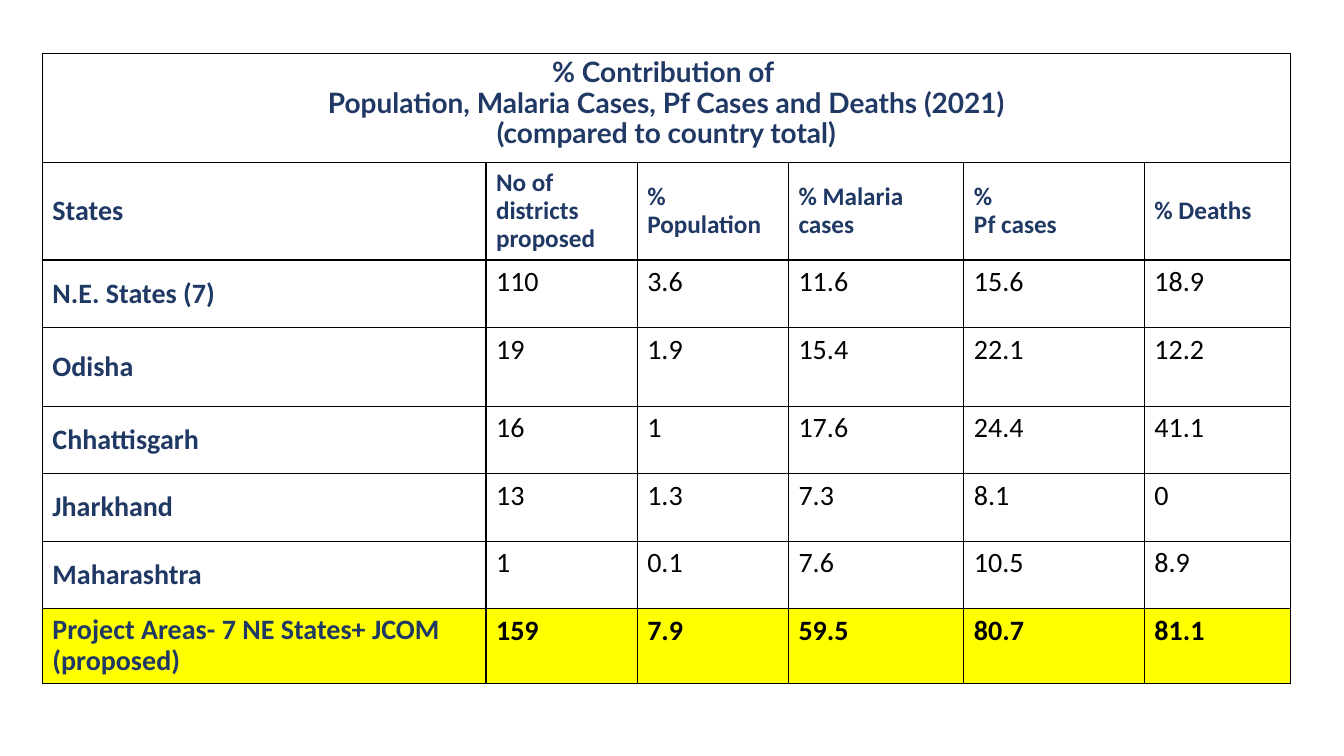
import pptx
import pptx.util
import pptx.dml.color
import pptx.enum.text
import pptx.oxml
import pptx.oxml.ns

Inches, Pt = pptx.util.Inches, pptx.util.Pt
RGB = pptx.dml.color.RGBColor
ALIGN = pptx.enum.text.PP_ALIGN
ANCHOR = pptx.enum.text.MSO_ANCHOR

NAVY = RGB(0x20, 0x38, 0x64)
BLACK = RGB(0, 0, 0)
WHITE = RGB(255, 255, 255)
YELLOW = RGB(255, 255, 0)

TITLE = ("% Contribution of \nPopulation, Malaria Cases, Pf Cases and Deaths (2021)\n"
         "(compared to country total)")
HEADS = ["States", "No of districts proposed", "% Population",
         "% Malaria cases", "%\nPf cases", "% Deaths"]
STATES = [
    ["N.E. States (7)", "110", "3.6", "11.6", "15.6", "18.9"],
    ["Odisha", "19", "1.9", "15.4", "22.1", "12.2"],
    ["Chhattisgarh", "16", "1", "17.6", "24.4", "41.1"],
    ["Jharkhand", "13", "1.3", "7.3", "8.1", "0"],
    ["Maharashtra", "1", "0.1", "7.6", "10.5", "8.9"],
]
TOTAL = ["Project Areas- 7 NE States+ JCOM (proposed)",
         "159", "7.9", "59.5", "80.7", "81.1"]
WIDTHS = [4.4, 1.5, 1.5, 1.74, 1.79, 1.45]
HEIGHTS = [1.08, 0.97, 0.67, 0.78, 0.67, 0.67, 0.67, 0.74]


def write(frame, text, font="Calibri", size=20, color=NAVY, bold=True,
          align=ALIGN.LEFT, space=0.9):
    """Fill a text frame, one paragraph per line of text."""
    for i, line in enumerate(text.split("\n")):
        para = frame.paragraphs[0] if i == 0 else frame.add_paragraph()
        para.alignment, para.line_spacing = align, space
        run = para.add_run()
        run.text = line
        run.font.name, run.font.size = font, Pt(size)
        run.font.bold, run.font.color.rgb = bold, color


class Deck:
    """Holds the table style and the current slide."""

    def __init__(self, line=BLACK, width=1):
        self.line, self.width = line, width
        self.prs = pptx.Presentation()
        self.prs.slide_width = Inches(13.33)
        self.prs.slide_height = Inches(7.5)
        self.slide = self.prs.slides.add_slide(self.prs.slide_layouts[6])

    def grid(self, left, top, widths, heights):
        frame = self.slide.shapes.add_table(
            len(heights), len(widths), Inches(left), Inches(top),
            Inches(sum(widths)), Inches(sum(heights)))
        table = frame.table
        table.first_row = table.horz_banding = False
        for col, width in zip(table.columns, widths):
            col.width = Inches(width)
        for row, height in zip(table.rows, heights):
            row.height = Inches(height)
            for cell in row.cells:
                self.edge(cell)
                self.fill(cell, WHITE)
        return table

    def edge(self, cell):
        props = cell._tc.get_or_add_tcPr()
        for side in ("lnL", "lnR", "lnT", "lnB"):
            props.append(pptx.oxml.parse_xml(
                f'<a:{side} {pptx.oxml.ns.nsdecls("a")} w="{Pt(self.width)}">'
                f'<a:solidFill><a:srgbClr val="{self.line}"/></a:solidFill>'
                f'</a:{side}>'))

    def fill(self, cell, color):
        cell.fill.solid()
        cell.fill.fore_color.rgb = color

    def label(self, cell, text, **style):
        cell.vertical_anchor = ANCHOR.MIDDLE
        write(cell.text_frame, text, **style)

    def value(self, cell, text, bold=False):
        write(cell.text_frame, text, color=BLACK, bold=bold, space=1.0)


def main():
    deck = Deck()
    table = deck.grid(0.42, 0.53, WIDTHS, HEIGHTS)

    # Title across the top row
    top = table.cell(0, 0)
    top.merge(table.cell(0, len(WIDTHS) - 1))
    write(top.text_frame, TITLE, font="Lato", align=ALIGN.CENTER)

    # Column heads
    for c, head in enumerate(HEADS):
        deck.label(table.cell(1, c), head, size=18 if c else 20)

    # States, then the highlighted total
    for r, (name, *nums) in enumerate(STATES + [TOTAL], 2):
        last = r == len(HEIGHTS) - 1
        deck.label(table.cell(r, 0), name)
        for c, num in enumerate(nums, 1):
            deck.value(table.cell(r, c), num, bold=last)
        if last:
            for cell in table.rows[r].cells:
                deck.fill(cell, YELLOW)

    deck.prs.save("out.pptx")


if __name__ == "__main__":
    main()
